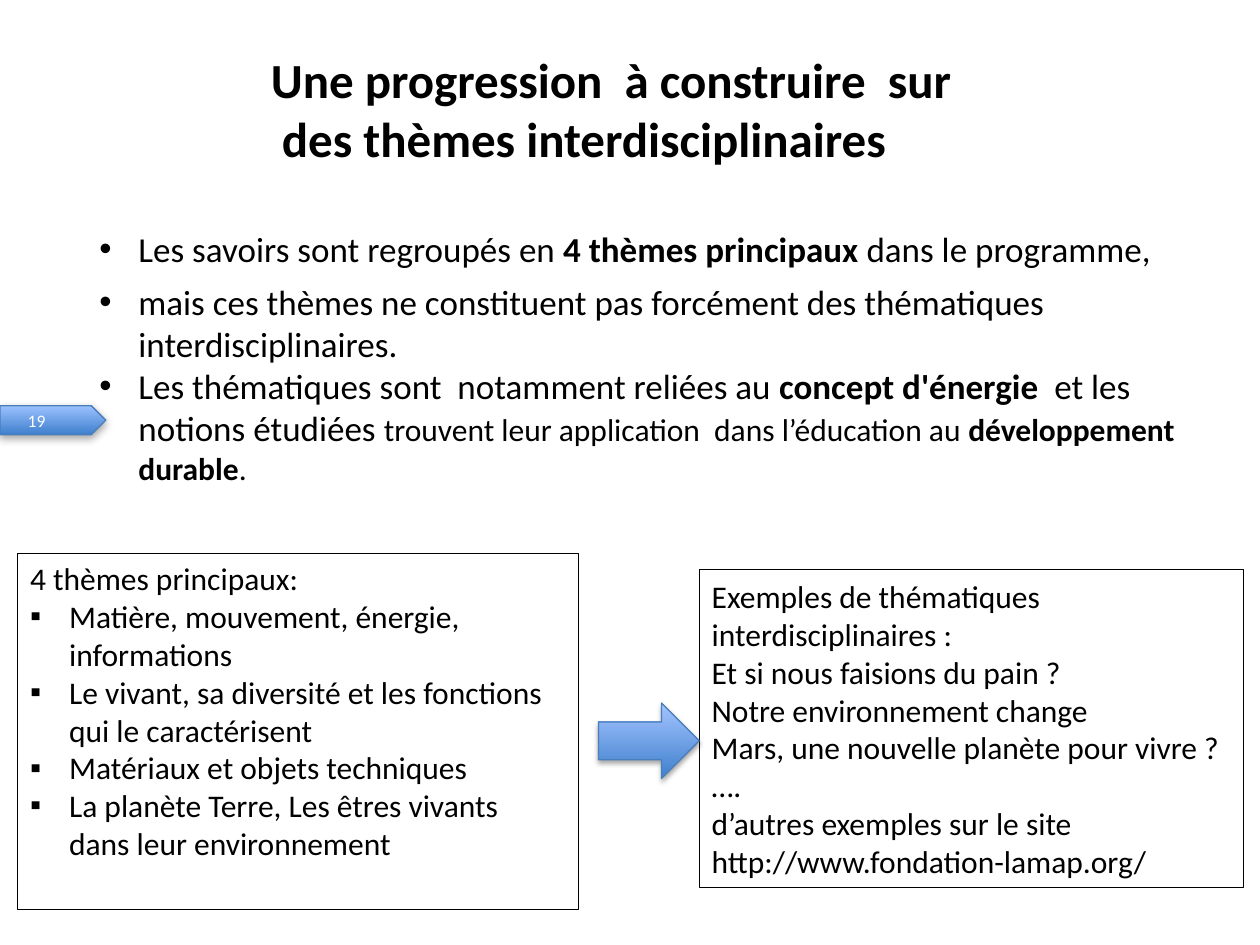
import pptx
import pptx.util
import pptx.dml.color
import pptx.enum.shapes
import pptx.enum.text
from dataclasses import dataclass
from lxml import etree

Inches, Pt = pptx.util.Inches, pptx.util.Pt
RGB = pptx.dml.color.RGBColor.from_string
Shape = pptx.enum.shapes.MSO_SHAPE
Anchor = pptx.enum.text.MSO_ANCHOR
Align = pptx.enum.text.PP_ALIGN


@dataclass
class Theme:
    font: str = "Calibri"
    ink: str = "000000"
    white: str = "FFFFFF"
    dark: str = "3F80CD"
    edge: str = "4A7EBB"
    head: int = 28
    body: int = 20
    note: int = 18
    tag: int = 10


theme = Theme()


def write(frame, paras, size, color=theme.ink, anchor=Anchor.TOP, wrap=True):
    """Fill a frame; each paragraph is (bullet, space before, runs of (text, format))."""
    form = {"word_wrap": wrap, "vertical_anchor": anchor,
            "auto_size": pptx.enum.text.MSO_AUTO_SIZE.NONE}
    for key, val in form.items():
        setattr(frame, key, val)
    for i, (mark, gap, runs) in enumerate(paras):
        para = frame.paragraphs[0] if i == 0 else frame.add_paragraph()
        para.alignment = Align.LEFT
        if mark:
            props = para._p.get_or_add_pPr()
            props.set("marL", str(Inches(0.31)))
            props.set("indent", str(-Inches(0.31)))
            for name, key, val in (("buFont", "typeface", "Arial"), ("buChar", "char", mark)):
                etree.SubElement(props, pptx.oxml.ns.qn("a:" + name)).set(key, val)
        if gap:
            para.space_before = Pt(gap)
        for text, extra in runs:
            run = para.add_run()
            run.text = text
            look = {"name": theme.font, "size": Pt(size), "bold": False, **extra}
            for key, val in look.items():
                setattr(run.font, key, val)
            run.font.color.rgb = RGB(color)


def glow(shape, light, blur):
    """Give a shape the blue gradient, thin edge and soft shadow below."""
    shape.fill.gradient()
    shape.fill.gradient_angle = 90
    for stop, color in zip(shape.fill.gradient_stops, (theme.dark, light)):
        stop.color.rgb = RGB(color)
    for stop, place in zip(shape.fill.gradient_stops, (0, 1)):
        stop.position = place
    shape.line.color.rgb = RGB(theme.edge)
    shape.line.width = Pt(0.75)
    shape.shadow.inherit = False
    qn = pptx.oxml.ns.qn
    shade = etree.SubElement(shape._element.spPr.find(qn("a:effectLst")), qn("a:outerShdw"))
    for key, val in {"blurRad": Pt(blur), "dist": Pt(1.8), "dir": 5400000, "rotWithShape": 0}.items():
        shade.set(key, str(val))
    tint = etree.SubElement(shade, qn("a:srgbClr"), val=theme.ink)
    etree.SubElement(tint, qn("a:alpha"), val="35000")


deck = pptx.Presentation()
deck.slide_width, deck.slide_height = Inches(10), Inches(7.5)
slide = deck.slides.add_slide(deck.slide_layouts[5])
shapes = slide.shapes

# Page tag
tag = shapes.add_shape(Shape.PENTAGON, Inches(0), Inches(3.22), Inches(0.84), Inches(0.23))
glow(tag, "9BC1FF", 5)
write(tag.text_frame, [(None, 0, [("19", {})])], theme.tag, theme.white, Anchor.MIDDLE)
tag.text_frame.margin_left = Inches(0.22)
tag.text_frame.margin_right = Inches(0)

# Title
title = shapes.title
place = {"left": 2.05, "top": 0.34, "width": 5.66, "height": 1.04}
for key, val in place.items():
    setattr(title, key, Inches(val))
bold = {"bold": True}
lines = ("Une progression  à construire  sur", " des thèmes interdisciplinaires")
write(title.text_frame, [(None, 0, [(line, bold)]) for line in lines], theme.head, wrap=False)

# Main points
small = {"size": Pt(theme.note)}
points = [
    ("•", 0, [("Les savoirs sont regroupés en ", {}), ("4 thèmes principaux ", bold),
              ("dans le programme,", {})]),
    ("•", 6, [("mais ces thèmes ne constituent pas forcément des thématiques "
               "interdisciplinaires.", {})]),
    ("•", 0, [("Les thématiques sont  notamment reliées au ", {}),
              ("concept d'énergie  ", bold), ("et les notions étudiées ", {}),
              ("trouvent leur application  dans l’éducation au ", small),
              ("développement durable", {**small, **bold}), (".", small)]),
]
body = shapes.add_textbox(Inches(0.69), Inches(1.76), Inches(9.29), Inches(2.19))
write(body.text_frame, points, theme.body)

# Framed lists
topics = ["4 thèmes principaux:",
          "Matière, mouvement, énergie, informations",
          "Le vivant, sa diversité et les fonctions qui le caractérisent",
          "Matériaux et objets techniques",
          "La planète Terre, Les êtres vivants dans leur environnement"]
ideas = ["Exemples de thématiques interdisciplinaires :",
         "Et si nous faisions du pain ?",
         "Notre environnement change",
         "Mars, une nouvelle planète pour vivre ?",
         "….",
         "d’autres exemples sur le site http://www.fondation-lamap.org/"]
boxes = [((0.14, 4.39, 4.45, 2.83), topics, "▪", Anchor.TOP),
         ((5.55, 4.52, 4.32, 2.52), ideas, None, Anchor.MIDDLE)]
for spot, texts, mark, anchor in boxes:
    box = shapes.add_shape(Shape.RECTANGLE, *map(Inches, spot))
    box.fill.background()
    box.line.color.rgb = RGB(theme.ink)
    box.line.width = Pt(0.25)
    box.shadow.inherit = False
    paras = [(mark if i else None, 0, [(text, {})]) for i, text in enumerate(texts)]
    write(box.text_frame, paras, theme.note, anchor=anchor)

# Arrow from themes to examples
arrow = shapes.add_shape(Shape.RIGHT_ARROW, Inches(4.75), Inches(5.58), Inches(0.8), Inches(0.6))
glow(arrow, "A4C4FF", 3.1)

deck.save("out.pptx")
